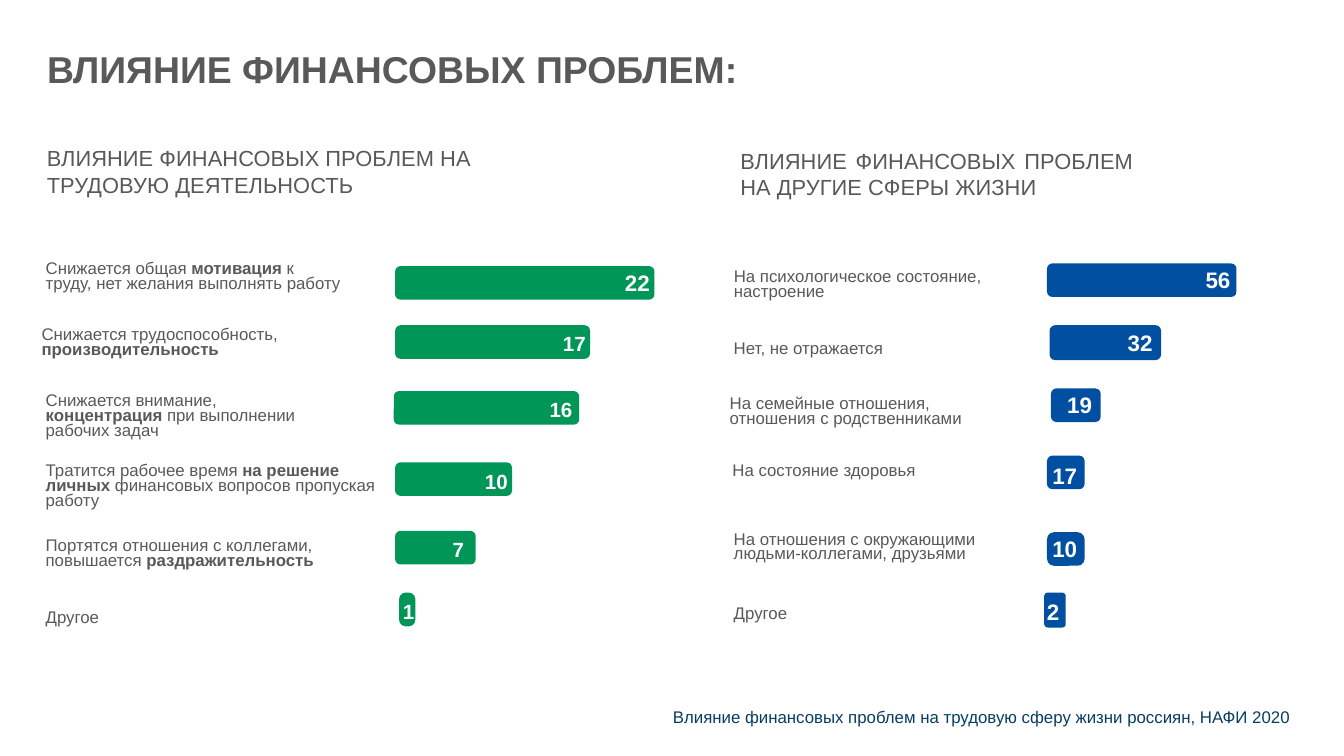
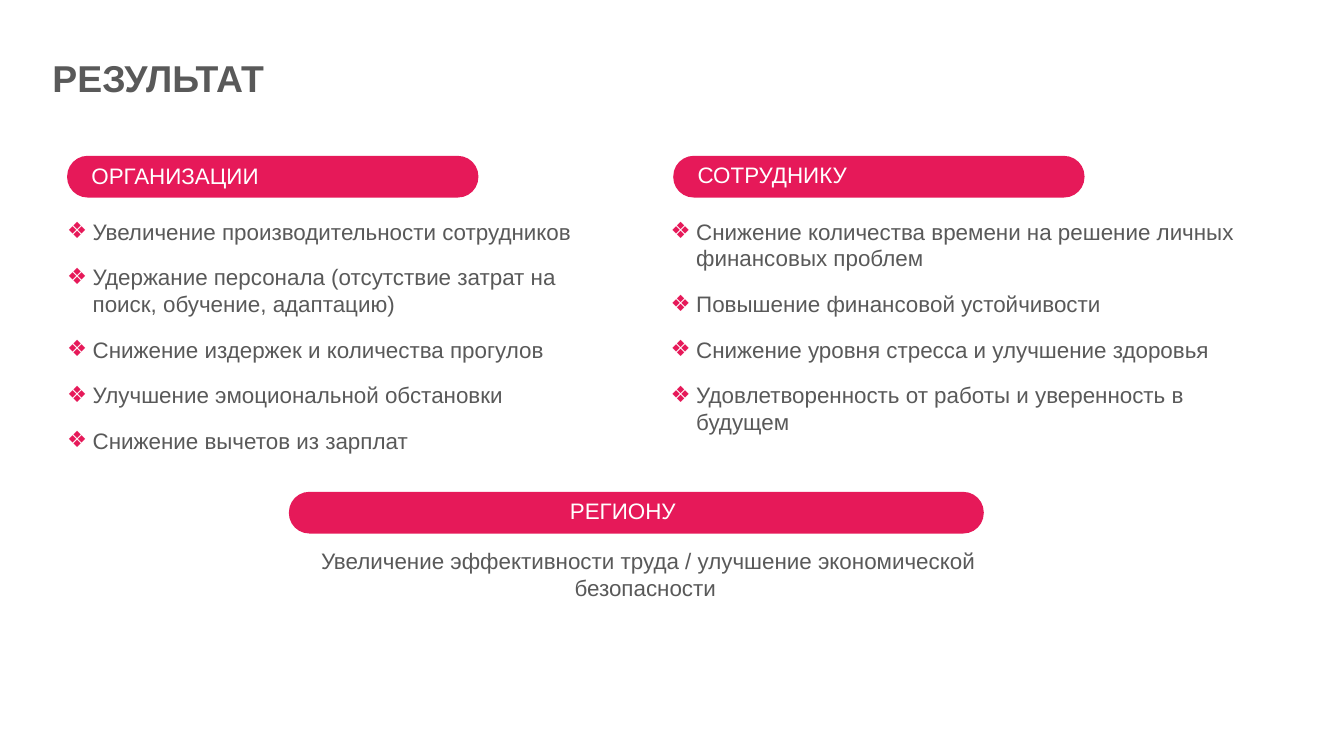
from lxml import etree
from pptx import Presentation
from pptx import util as u
from pptx.dml.color import RGBColor
from pptx.enum import shapes, text
from pptx.oxml import ns

PX = 9144  # 100 px to the inch
GREY, WHITE, NAVY = "595959", "FFFFFF", "073D63"
GREEN, BLUE, PINK = "009657", "014FA0", "E61959"
FONT = "Arial"
LEFT, CENTER, JUSTIFY = (text.PP_ALIGN.LEFT, text.PP_ALIGN.CENTER,
                         text.PP_ALIGN.JUSTIFY)

prs = Presentation()
prs.slide_width = 1000 * PX
prs.slide_height = prs.slide_width * 9 // 16
title_only = prs.slide_layouts[5]


def write(s, box, content, size=12, color=GREY, bold=False, align=LEFT,
          leading=None, after=0, inset=(0, 0), bullet=None, title=False):
    """Write lines of text in a box; **marks** toggle bold."""
    x, y, w, h = [v * PX for v in box]
    sp = s.shapes.title if title else s.shapes.add_textbox(x, y, w, h)
    sp.left, sp.top, sp.width, sp.height = x, y, w, h
    tf = sp.text_frame
    tf.word_wrap = True
    tf.auto_size = text.MSO_AUTO_SIZE.NONE
    tf.vertical_anchor = text.MSO_ANCHOR.TOP
    tf.margin_left = tf.margin_right = inset[0] * PX
    tf.margin_top = tf.margin_bottom = inset[1] * PX
    for i, line in enumerate(content.split("\n")):
        p = tf.add_paragraph() if i else tf.paragraphs[0]
        p.alignment = align
        p.space_after = u.Pt(after)
        if leading:
            p.line_spacing = u.Pt(leading)
        if bullet:
            pPr = p._p.get_or_add_pPr()
            pPr.set("marL", str(19 * PX))
            pPr.set("indent", str(-19 * PX))
            clr = etree.SubElement(pPr, ns.qn("a:buClr"))
            etree.SubElement(clr, ns.qn("a:srgbClr")).set("val", bullet)
            etree.SubElement(pPr, ns.qn("a:buFont")).set("typeface", FONT)
            etree.SubElement(pPr, ns.qn("a:buChar")).set("char", "❖")
        for j, part in enumerate(line.split("**")):
            if part:
                r = p.add_run()
                r.text = part
                r.font.name, r.font.size = FONT, u.Pt(size)
                r.font.bold = bold or j % 2 == 1
                r.font.color.rgb = RGBColor.from_string(color)


def add_bar(s, box, color, rounding):
    sp = s.shapes.add_shape(shapes.MSO_SHAPE.ROUNDED_RECTANGLE,
                            *[v * PX for v in box])
    sp.adjustments[0] = rounding
    sp.shadow.inherit = False
    sp.fill.solid()
    sp.fill.fore_color.rgb = RGBColor.from_string(color)
    sp.line.fill.background()


# Slide 1: two sets of bars
s = prs.slides.add_slide(title_only)
framed = dict(inset=(10, 5))
write(s, (25, 29, 566, 44), "ВЛИЯНИЕ ФИНАНСОВЫХ ПРОБЛЕМ:", size=20, bold=True,
      title=True, **framed)
write(s, (25, 103, 347, 49),
      "ВЛИЯНИЕ ФИНАНСОВЫХ ПРОБЛЕМ НА\nТРУДОВУЮ ДЕЯТЕЛЬНОСТЬ",
      size=11.7, align=JUSTIFY, **framed)
write(s, (541, 105, 312, 49),
      "ВЛИЯНИЕ ФИНАНСОВЫХ ПРОБЛЕМ НА ДРУГИЕ СФЕРЫ ЖИЗНИ",
      size=11.7, align=JUSTIFY, **framed)

# Label and its box, bar box and rounding, value and its box
work_rows = [
    ("Снижается общая **мотивация** к труду, нет желания выполнять работу",
     (34, 196, 220, 26), (294, 198, 193, 25), 0.16, 22, (465, 200, 70, 25)),
    ("Снижается трудоспособность, **производительность**",
     (31, 245, 263, 26), (294, 242, 145, 25), 0.16, 17, (409, 240, 78, 28)),
    ("Снижается внимание, **концентрация** при выполнении рабочих задач",
     (34, 294, 213, 26), (293, 291, 138, 25), 0.16, 16, (399, 289, 58, 28)),
    ("Тратится рабочее время **на решение личных** финансовых вопросов "
     "пропуская работу",
     (34, 346, 250, 26), (294, 344, 87, 25), 0.16, 10, (351, 342, 58, 28)),
    ("Портятся отношения с коллегами, повышается **раздражительность**",
     (34, 402, 250, 26), (294, 395, 60, 25), 0.16, 7, (327, 393, 45, 28)),
    ("Другое",
     (34, 455, 263, 15), (297, 441, 12, 25), 0.39, 1, (290, 439, 37, 28)),
]
life_rows = [
    ("На психологическое состояние, настроение",
     (546, 202, 215, 26), (779, 196, 141, 25), 0.16, 56, (897, 198, 70, 25)),
    ("Нет, не отражается",
     (546, 255, 203, 26), (781, 242, 83, 26), 0.16, 32, (839, 245, 70, 25)),
    ("На семейные отношения, отношения с родственниками",
     (543, 296, 203, 26), (782, 289, 37, 25), 0.16, 19, (794, 291, 70, 25)),
    ("На состояние здоровья",
     (545, 346, 263, 27), (779, 339, 28, 25), 0.16, 17, (783, 344, 46, 25)),
    ("На отношения с окружающими людьми-коллегами, друзьями",
     (546, 397, 203, 26), (779, 396, 28, 25), 0.21, 10, (783, 398, 70, 25)),
    ("Другое",
     (546, 452, 263, 15), (777, 441, 16, 26), 0.16, 2, (779, 445, 46, 25)),
]
for color, rows in ((GREEN, work_rows), (BLUE, life_rows)):
    for label, label_box, bar_box, rounding, value, value_box in rows:
        write(s, label_box, label, size=9, leading=8, after=5)
        add_bar(s, bar_box, color, rounding)
        small = value_box[3] == 28
        write(s, value_box, str(value), size=11 if small else 12, color=WHITE,
              bold=True, leading=14.4, inset=(10, 5) if small else (0, 0))

# Source line
write(s, (472, 521, 516, 25),
      "Влияние финансовых проблем на трудовую сферу жизни россиян, НАФИ 2020",
      size=9, color=NAVY, align=CENTER, **framed)

# Slide 2: results for three groups
s = prs.slides.add_slide(title_only)
write(s, (39, 23, 923, 66), "РЕЗУЛЬТАТ", size=20, bold=True, leading=37.2,
      title=True)

# Pink bands with headings
for heading, x, y, w, text_x, text_y in (
        ("ОРГАНИЗАЦИИ", 50, 116, 306, 68, 121),
        ("СОТРУДНИКУ", 501, 116, 306, 519, 120),
        ("РЕГИОНУ", 215, 366, 517, 424, 370)):
    add_bar(s, (x, y, w, 31), PINK, 0.49)
    write(s, (text_x, text_y, 269, 25), heading, color=WHITE, leading=14.4)

# Bulleted lists
body = dict(leading=14.4, after=10)
write(s, (50, 162, 403, 44),
      "Увеличение производительности сотрудников\n"
      "Удержание персонала (отсутствие затрат на поиск, обучение, адаптацию)\n"
      "Снижение издержек и количества прогулов\n"
      "Улучшение эмоциональной обстановки\n"
      "Снижение вычетов из зарплат", bullet=PINK, **body)
write(s, (499, 162, 438, 64),
      "Снижение количества времени на решение личных финансовых проблем\n"
      "Повышение финансовой устойчивости\n"
      "Снижение уровня стресса и улучшение здоровья\n"
      "Удовлетворенность от работы и уверенность в будущем",
      bullet=PINK, **body)

# Result for the region
write(s, (224, 407, 517, 47),
      "Увеличение эффективности труда / улучшение экономической безопасности ",
      align=CENTER, **body)

prs.save("out.pptx")
